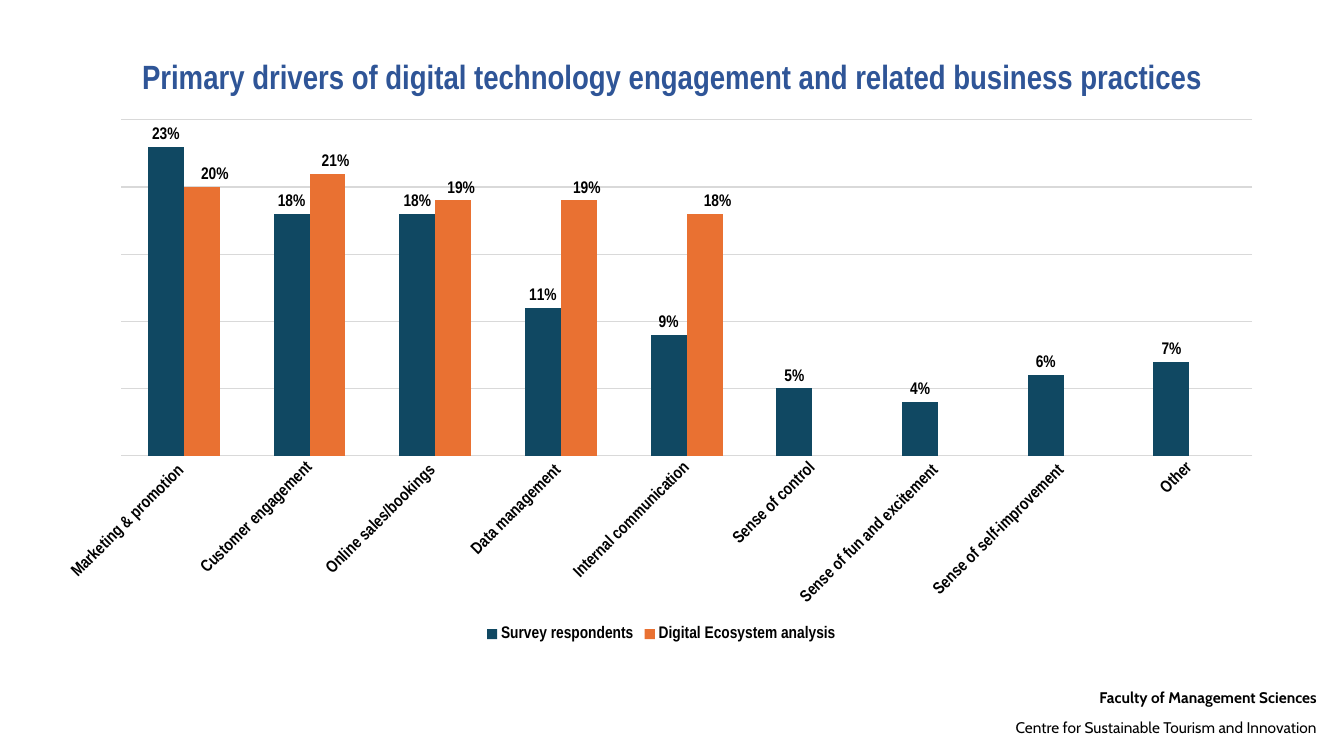
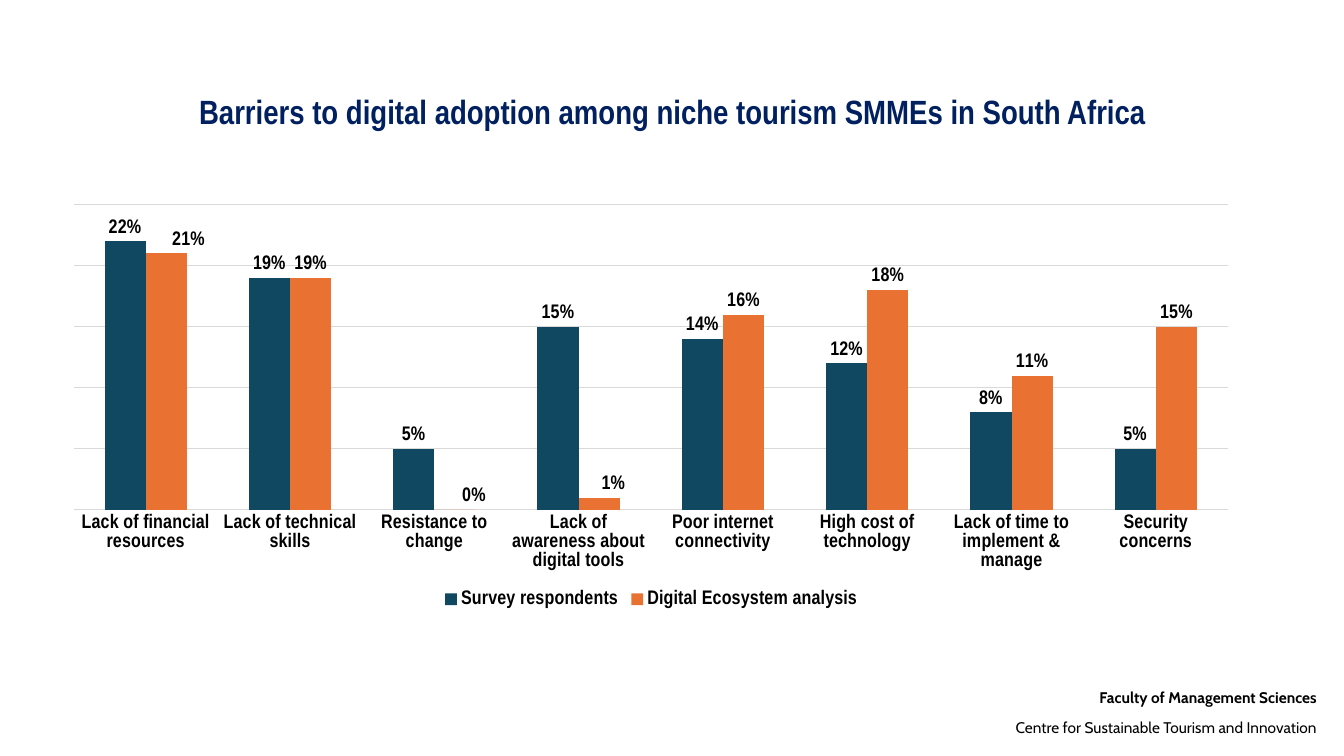
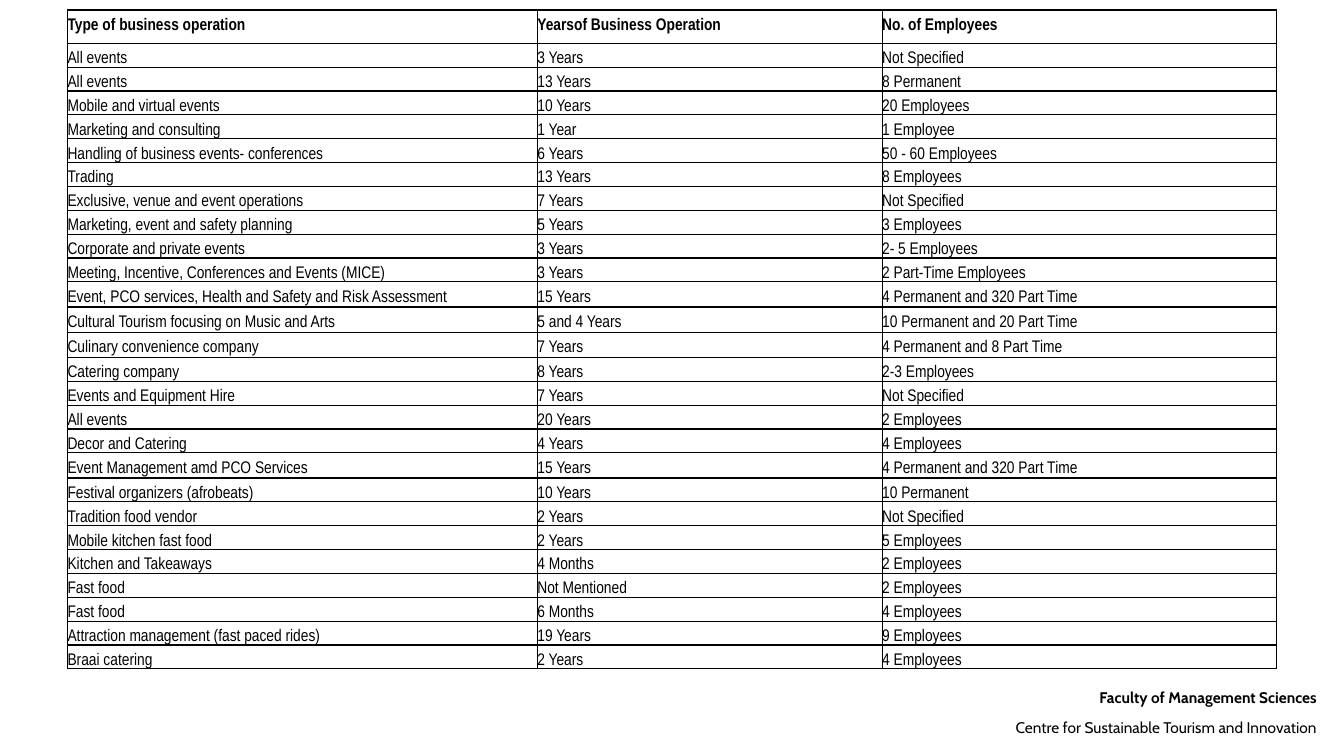
from lxml import etree
from pptx import Presentation
from pptx.chart.data import CategoryChartData
from pptx.dml.color import RGBColor
from pptx.enum.chart import XL_CHART_TYPE, XL_LABEL_POSITION, XL_LEGEND_POSITION, XL_TICK_MARK
from pptx.enum.text import MSO_ANCHOR, MSO_AUTO_SIZE, PP_ALIGN
from pptx.oxml import parse_xml
from pptx.oxml.ns import nsdecls, qn
from pptx.util import Inches, Pt

COLUMN_CLUSTERED = XL_CHART_TYPE.COLUMN_CLUSTERED
OUTSIDE_END = XL_LABEL_POSITION.OUTSIDE_END
LEGEND_BOTTOM = XL_LEGEND_POSITION.BOTTOM
NO_TICK = XL_TICK_MARK.NONE
MIDDLE = MSO_ANCHOR.MIDDLE
NO_AUTOFIT = MSO_AUTO_SIZE.NONE
CENTER, RIGHT, JUSTIFY = PP_ALIGN.CENTER, PP_ALIGN.RIGHT, PP_ALIGN.JUSTIFY

COLORS = {
    "text": "000000",
    "title_blue": "2F5597",
    "title_navy": "002060",
    "survey": "104862",
    "ecosystem": "E97132",
    "grid": "D9D9D9",
}
BODY_FONT = "Arial Narrow"
FOOTER_FONT = "Cabin"
PERCENT = "0%"
TITLE_ONLY, BLANK = 5, 6

DRIVERS = {
    "categories": [
        "Marketing & promotion ", "Customer engagement", "Online sales/bookings ",
        "Data management ", "Internal communication", "Sense of control",
        "Sense of fun and excitement ", "Sense of self-improvement ", "Other",
    ],
    "survey": [0.23, 0.18, 0.18, 0.11, 0.09, 0.05, 0.04, 0.06, 0.07],
    "ecosystem": [0.2, 0.21, 0.19, 0.19, 0.18, None, None, None, None],
    # horizontal label shifts in inches, by point of the second series
    "shifts": {0: 0.13, 1: 0.08, 2: 0.08, 3: 0.08, 4: 0.13},
}
BARRIERS = {
    "categories": [
        "Lack of financial resources", "Lack of technical skills",
        "Resistance to change", "Lack of awareness about digital tools",
        "Poor internet connectivity", "High cost of technology",
        "Lack of time to implement & manage", "Security concerns",
    ],
    "survey": [0.22, 0.19, 0.05, 0.15, 0.14, 0.12, 0.08, 0.05],
    "ecosystem": [0.21, 0.19, 0, 0.01, 0.16, 0.18, 0.11, 0.15],
    "shifts": {0: 0.22, 2: 0.19, 3: 0.14},
}

BUSINESSES = [
    ("Type of business operation", "Yearsof Business Operation", "No. of Employees"),
    ("All events", "3 Years", "Not Specified"),
    ("All events", "13 Years", "8 Permanent"),
    ("Mobile and virtual events", "10 Years", "20 Employees"),
    ("Marketing and consulting", "1 Year", "1 Employee"),
    ("Handling of business events- conferences", "6 Years", "50 - 60 Employees"),
    ("Trading", "13 Years", "8 Employees"),
    ("Exclusive, venue and event operations", "7 Years", "Not Specified"),
    ("Marketing, event and safety planning", "5 Years", "3 Employees"),
    ("Corporate and private events", "3 Years", "2- 5 Employees"),
    ("Meeting, Incentive, Conferences and Events (MICE)", "3 Years", "2 Part-Time Employees"),
    ("Event, PCO services, Health and Safety and Risk Assessment", "15 Years",
     "4 Permanent and 320 Part Time"),
    ("Cultural Tourism focusing on Music and Arts", "5 and 4 Years",
     "10 Permanent and 20 Part Time"),
    ("Culinary convenience company", "7 Years", "4 Permanent and 8 Part Time"),
    ("Catering company", "8 Years", "2-3 Employees"),
    ("Events and Equipment Hire", "7 Years", "Not Specified"),
    ("All events", "20 Years", "2 Employees"),
    ("Decor and Catering", "4 Years", "4 Employees"),
    ("Event Management amd PCO Services", "15 Years", "4 Permanent and 320 Part Time"),
    ("Festival organizers (afrobeats)", "10 Years", "10 Permanent"),
    ("Tradition food vendor", "2 Years", "Not Specified"),
    ("Mobile kitchen fast food", "2 Years", "5 Employees"),
    ("Kitchen and Takeaways", "4 Months", "2 Employees"),
    ("Fast food", "Not Mentioned", "2 Employees"),
    ("Fast food", "6 Months", "4 Employees"),
    ("Attraction management (fast paced rides)", "19 Years", "9 Employees"),
    ("Braai catering", "2 Years", "4 Employees"),
]
COLUMN_WIDTHS = (4.66, 3.42, 3.91)
HEADER_HEIGHT, ROW_HEIGHT, TALL_ROW_HEIGHT = 0.33, 0.23, 0.25
TALL_ROWS = {11, 12, 13, 18}
TABLE_LINE = Pt(17)


def color(name):
    return RGBColor.from_string(COLORS[name])


def style_font(font, size, bold=True, name=BODY_FONT, color_name="text"):
    font.name = name
    font.size = Pt(size)
    font.bold = bold
    font.color.rgb = color(color_name)


def write(paragraph, text, alignment, line_spacing, size, **style):
    paragraph.alignment = alignment
    paragraph.line_spacing = line_spacing
    run = paragraph.add_run()
    run.text = text
    style_font(run.font, size, **style)


def add_master_footer(presentation, slide, box):
    """Build the footer on a slide, then move it to the master that all slides share."""
    footer = slide.shapes.add_textbox(*map(Inches, box))
    frame = footer.text_frame
    frame.word_wrap = True
    write(frame.paragraphs[0], "Faculty of Management Sciences", RIGHT, 1.5, 11,
          name=FOOTER_FONT)
    centre_line = frame.add_paragraph()
    centre_line.space_before = Pt(1.5)
    write(centre_line, "Centre for Sustainable Tourism and Innovation", RIGHT, 1.5, 11,
          bold=False, name=FOOTER_FONT)
    presentation.slide_master.shapes.element.append(footer.element)


def set_title(slide, text, box, color_name):
    title = slide.shapes.title
    title.left, title.top, title.width, title.height = map(Inches, box)
    frame = title.text_frame
    frame.auto_size = NO_AUTOFIT
    frame.vertical_anchor = MIDDLE
    write(frame.paragraphs[0], text, CENTER, 0.9, 24, color_name=color_name)


def manual_layout(target="", **values):
    """Return a c:layout element; values are fractions of the chart's size."""
    layout = parse_xml(f"<c:layout {nsdecls('c')}><c:manualLayout/></c:layout>")
    manual = layout[0]
    settings = {}
    if target:
        settings = {"layoutTarget": target, "xMode": "edge", "yMode": "edge"}
    settings.update(values)
    for tag, value in settings.items():
        text = value if isinstance(value, str) else f"{value:.4f}"
        etree.SubElement(manual, qn(f"c:{tag}"), val=text)
    return layout


def place_plot(chart, box, plot_box):
    left, top, width, height = box
    plot_left, plot_top, plot_width, plot_height = plot_box
    plot_area = chart.element.xpath("c:chart/c:plotArea")[0]
    for layout in plot_area.findall(qn("c:layout")):
        plot_area.remove(layout)
    plot_area.insert(0, manual_layout(
        "inner", x=(plot_left - left) / width, y=(plot_top - top) / height,
        w=plot_width / width, h=plot_height / height))


def shift_labels(chart, series, shifts, size, chart_width):
    for index, shift in shifts.items():
        label = series.points[index].data_label
        label.position = OUTSIDE_END
        style_font(label.font, size)
        element = chart.element.xpath(f".//c:ser[2]/c:dLbls/c:dLbl[c:idx/@val='{index}']")[0]
        element.insert(1, manual_layout(x=shift / chart_width, y=0))


def style_axes(chart, size, label_angle):
    category_axis, value_axis = chart.category_axis, chart.value_axis
    category_axis.major_tick_mark = NO_TICK
    category_axis.minor_tick_mark = NO_TICK
    category_axis.format.line.fill.background()
    style_font(category_axis.tick_labels.font, size)
    if label_angle:
        body = chart.element.xpath(".//c:catAx/c:txPr/a:bodyPr")[0]
        body.set("rot", str(label_angle * 60000))
        body.set("vert", "horz")
    value_axis.visible = False
    value_axis.minimum_scale = 0
    value_axis.maximum_scale = 0.25
    value_axis.major_unit = 0.05
    value_axis.has_major_gridlines = True
    gridline = value_axis.major_gridlines.format.line
    gridline.color.rgb = color("grid")
    gridline.width = Pt(0.75)


def add_comparison_chart(slide, data, box, plot_box, size, label_angle=0):
    chart_data = CategoryChartData(number_format=PERCENT)
    chart_data.categories = data["categories"]
    chart_data.add_series("Survey respondents", data["survey"])
    chart_data.add_series("Digital Ecosystem analysis", data["ecosystem"])
    chart = slide.shapes.add_chart(COLUMN_CLUSTERED, *map(Inches, box), chart_data).chart
    chart.has_title = False
    style_font(chart.font, size)
    chart.has_legend = True
    chart.legend.position = LEGEND_BOTTOM
    chart.legend.include_in_layout = False
    style_font(chart.legend.font, size)
    style_axes(chart, size, label_angle)
    place_plot(chart, box, plot_box)

    plot = chart.plots[0]
    plot.gap_width = 150
    plot.overlap = 0
    plot.vary_by_categories = False
    for series, color_name in zip(plot.series, ("survey", "ecosystem")):
        series.format.fill.solid()
        series.format.fill.fore_color.rgb = color(color_name)
        series.invert_if_negative = False
        labels = series.data_labels
        labels.show_value = True
        labels.position = OUTSIDE_END
        labels.number_format = PERCENT
        labels.number_format_is_linked = False
        style_font(labels.font, size)
    shift_labels(chart, plot.series[1], data["shifts"], size, box[2])


def add_cell_borders(table_frame):
    for properties in table_frame.element.xpath(".//a:tcPr"):
        for position, side in enumerate(("lnL", "lnR", "lnT", "lnB")):
            properties.insert(position, parse_xml(
                f'<a:{side} {nsdecls("a")} w="{Pt(1)}"><a:solidFill>'
                f'<a:srgbClr val="{COLORS["text"]}"/></a:solidFill></a:{side}>'))


def add_business_table(slide, left, top):
    heights = [TALL_ROW_HEIGHT if index in TALL_ROWS else ROW_HEIGHT
               for index in range(len(BUSINESSES))]
    heights[0] = HEADER_HEIGHT
    table_frame = slide.shapes.add_table(
        len(BUSINESSES), len(COLUMN_WIDTHS), Inches(left), Inches(top),
        Inches(sum(COLUMN_WIDTHS)), Inches(sum(heights)))
    table = table_frame.table
    table.horz_banding = False
    for column, width in zip(table.columns, COLUMN_WIDTHS):
        column.width = Inches(width)
    for row_index, (row, values) in enumerate(zip(table.rows, BUSINESSES)):
        row.height = Inches(heights[row_index])
        for cell, text in zip(row.cells, values):
            cell.margin_left = cell.margin_right = cell.margin_top = cell.margin_bottom = 0
            cell.fill.background()
            write(cell.text_frame.paragraphs[0], text, JUSTIFY, TABLE_LINE, 12,
                  bold=row_index == 0)
    add_cell_borders(table_frame)


def main():
    presentation = Presentation()
    presentation.slide_width = Inches(13.33)
    presentation.slide_height = Inches(7.5)
    layouts = presentation.slide_layouts

    drivers = presentation.slides.add_slide(layouts[TITLE_ONLY])
    add_master_footer(presentation, drivers, (5.66, 6.69, 7.5, 0.56))
    set_title(drivers,
              "Primary drivers of digital technology engagement and related business practices",
              (0, 0.5, 13.33, 0.56), "title_blue")
    add_comparison_chart(drivers, DRIVERS, (0.45, 1.08, 12.22, 5.33),
                         (1.2, 1.19, 11.22, 3.33), 12, label_angle=-45)

    barriers = presentation.slides.add_slide(layouts[TITLE_ONLY])
    set_title(barriers, "Barriers to digital adoption among niche tourism SMMEs in South Africa",
              (0.92, 0.4, 11.5, 1.45), "title_navy")
    add_comparison_chart(barriers, BARRIERS, (0.5, 1.94, 11.92, 4.14),
                         (0.73, 2.03, 11.45, 3.03), 14)

    businesses = presentation.slides.add_slide(layouts[BLANK])
    add_business_table(businesses, 0.67, 0.1)

    presentation.save("out.pptx")


if __name__ == "__main__":
    main()
